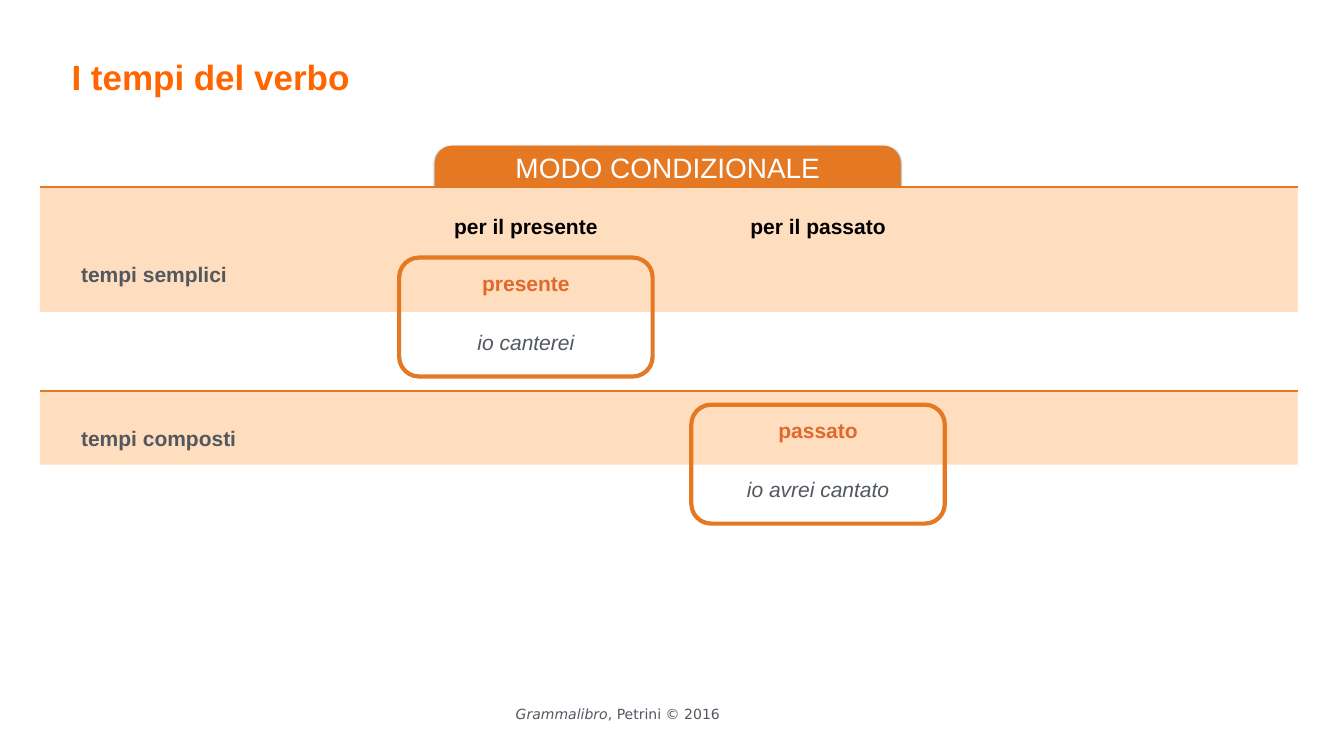
from lxml.etree import SubElement
from pptx import Presentation
from pptx.dml.color import RGBColor
from pptx.enum.shapes import MSO_CONNECTOR, MSO_SHAPE
from pptx.enum.text import MSO_ANCHOR, PP_ALIGN
from pptx.oxml.ns import qn
from pptx.util import Inches, Pt

WIDE, HIGH = 26.67, 15
COLS = (29.7, 51.44)
COL_W = 18.86
LEFT, SPAN = 2.96, 93.59
ROW_H = 4.67
HUES = {
    "title": "FF6600",
    "edge": "E47823",
    "band": "FFDDBF",
    "tense": "E0692C",
    "grey": "53585F",
    "black": "000000",
    "white": "FFFFFF",
}


def hue(name):
    return RGBColor.from_string(HUES[name])


def place(x, y, w, h):
    return [Inches(part * side / 100)
            for part, side in ((x, WIDE), (y, HIGH), (w, WIDE), (h, HIGH))]


def run(text, size, tone, bold=False, slant=False, font="Arial"):
    return text, size, tone, bold, slant, font


def add_text(slide, box, lines, align=PP_ALIGN.CENTER, space=1.2, gap=0,
             inset=0.06, anchor=MSO_ANCHOR.MIDDLE, wrap=True):
    frame = slide.shapes.add_textbox(*place(*box)).text_frame
    frame.word_wrap = wrap
    frame.vertical_anchor = anchor
    frame.margin_left = frame.margin_right = Inches(inset)
    frame.margin_top = frame.margin_bottom = Inches(0.06)
    for i, runs in enumerate(lines):
        para = frame.add_paragraph() if i else frame.paragraphs[0]
        para.alignment = align
        para.line_spacing = space
        if i:
            para.space_before = Pt(gap)
        for text, size, tone, bold, slant, face in runs:
            piece = para.add_run()
            piece.text = text
            font = piece.font
            font.name, font.size = face, Pt(size)
            font.bold, font.italic = bold, slant
            font.color.rgb = hue(tone)


def add_block(slide, kind, box, fill=None, edge=None):
    shape = slide.shapes.add_shape(kind, *place(*box))
    shape.shadow.inherit = False
    if fill:
        shape.fill.solid()
        shape.fill.fore_color.rgb = hue(fill)
    else:
        shape.fill.background()
    if edge:
        shape.line.color.rgb = hue(edge)
        shape.line.width = Pt(6)
    else:
        shape.line.fill.background()
    return shape


def add_tab(slide):
    tab = add_block(slide, MSO_SHAPE.ROUNDED_RECTANGLE,
                    (32.36, 19.27, 34.65, 19.4), "edge")
    tab.adjustments[0] = 0.118
    glow = SubElement(tab.element.spPr.find(qn("a:effectLst")), qn("a:outerShdw"),
                      blurRad=str(Pt(3)), dist=str(Pt(2)), dir="5400000",
                      rotWithShape="0")
    tint = SubElement(glow, qn("a:srgbClr"), val=HUES["black"])
    SubElement(tint, qn("a:alpha"), val="50000")


def add_band(slide, top, high, label, row):
    add_block(slide, MSO_SHAPE.RECTANGLE, (LEFT, top, SPAN, high), "band")
    x, y, w, _ = place(LEFT, top, SPAN, 0)
    rule = slide.shapes.add_connector(MSO_CONNECTOR.STRAIGHT, x, y, x + w, y)
    rule.line.color.rgb = hue("edge")
    rule.line.width = Pt(2)
    SubElement(rule.element.spPr, qn("a:effectLst"))
    add_text(slide, (5.81, row, 13.87, ROW_H),
             [[run(label, 30, "grey", bold=True)]], PP_ALIGN.LEFT)


def add_card(slide, col, top, tense, sample):
    add_text(slide, (col, top + 0.55, COL_W, 12.73),
             [[run(tense, 30, "tense", bold=True)],
              [run(sample, 30, "grey", slant=True)]], gap=41)
    add_block(slide, MSO_SHAPE.ROUNDED_RECTANGLE,
              (col, top, COL_W, 15.73), edge="edge")


def main():
    deck = Presentation()
    deck.slide_width, deck.slide_height = Inches(WIDE), Inches(HIGH)
    slide = deck.slides.add_slide(deck.slide_layouts[6])

    add_text(slide, (37.87, 93.53, 16.2, 2.4),
             [[run("Grammalibro", 20, "grey", slant=True, font="DejaVu Sans"),
               run(", Petrini © 2016", 20, "grey", font="DejaVu Sans")]],
             space=0.7, wrap=False)
    add_tab(slide)
    add_band(slide, 24.73, 16.53, "tempi semplici", 33.6)
    add_band(slide, 51.73, 9.73, "tempi composti", 55.27)
    add_text(slide, (32.36, 19.07, 34.65, 5.53),
             [[run("MODO CONDIZIONALE", 40, "white")]],
             space=1.1, inset=0.1, anchor=MSO_ANCHOR.TOP)
    for col, head in zip(COLS, ("per il presente", "per il passato")):
        add_text(slide, (col, 27.23, COL_W, ROW_H),
                 [[run(head, 30, "black", bold=True)]])
    add_card(slide, COLS[0], 34.07, "presente", "io canterei")
    add_card(slide, COLS[1], 53.53, "passato", "io avrei cantato")
    add_text(slide, (5.1, 6.47, 38.47, 6.8),
             [[run("I tempi del verbo", 50, "title", bold=True)]],
             PP_ALIGN.LEFT, space=1.1)
    deck.save("out.pptx")


if __name__ == "__main__":
    main()
